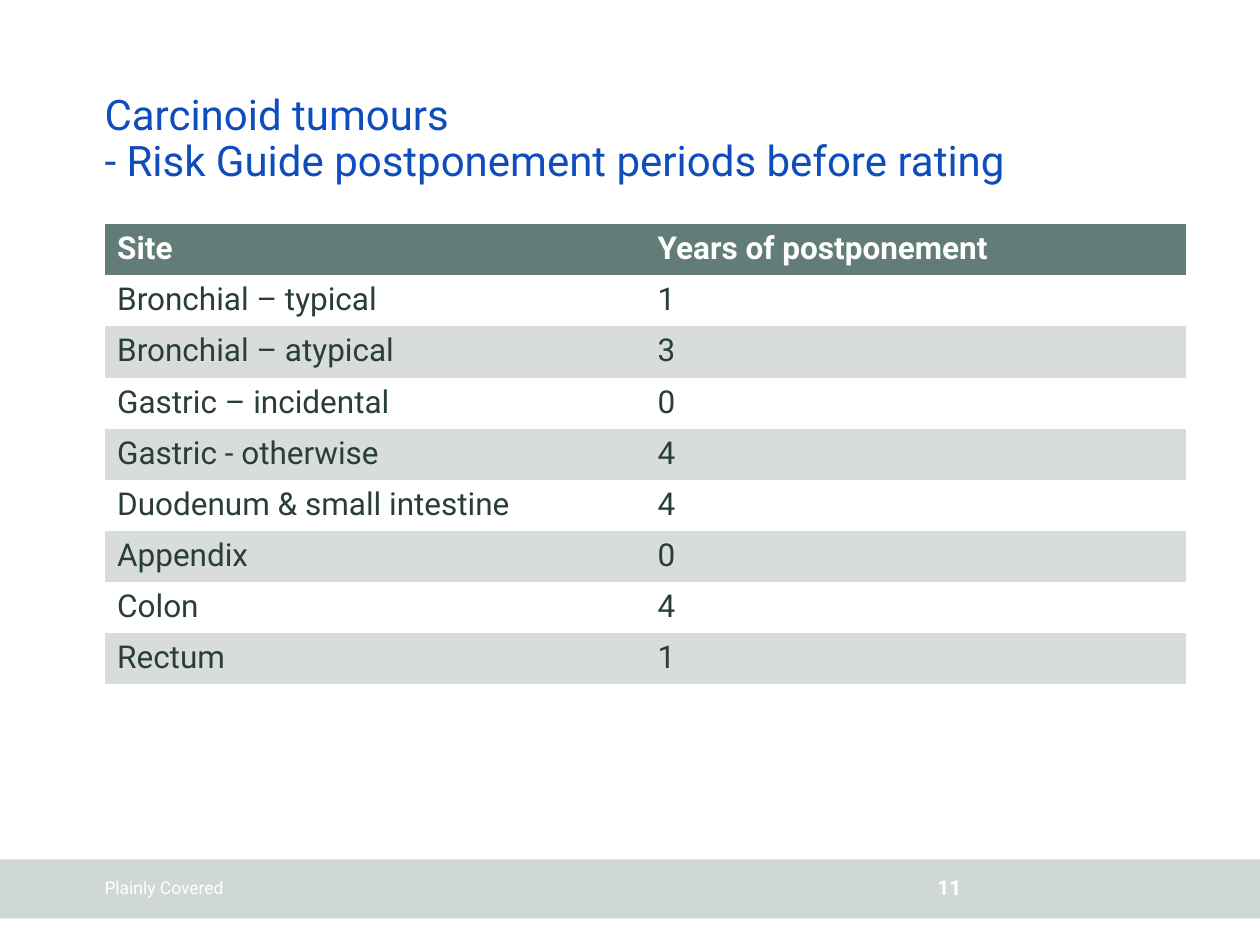
from typing import NamedTuple

from pptx import Presentation
from pptx import util as u
from pptx.dml.color import RGBColor
from pptx.enum import shapes, text

FONT = "Roboto"
WHITE, BLUE, DARK = "FFFFFF", "0F4DBC", "283E36"
HEADER_FILL, BAND_FILL, FOOTER_FILL = "627D77", "D8DCDB", "D0D8D6"
PLAIN_TABLE_STYLE = "{2D5ABB26-0587-4C30-8999-92F81FD0307C}"
LEFT = 0.83


class Postponement(NamedTuple):
    site: str
    years: str


class FooterLabel(NamedTuple):
    wording: str
    box: tuple[float, float, float, float]
    size: int
    bold: bool


HEADINGS = Postponement("Site", "Years of postponement")
PERIODS = [
    Postponement("Bronchial – typical", "1"),
    Postponement("Bronchial – atypical", "3"),
    Postponement("Gastric – incidental", "0"),
    Postponement("Gastric - otherwise", "4"),
    Postponement("Duodenum & small intestine", "4"),
    Postponement("Appendix", "0"),
    Postponement("Colon", "4"),
    Postponement("Rectum", "1"),
]
FOOTER_LABELS = [
    FooterLabel("Plainly Covered", (LEFT, 6.98, 6.46, 0.15), 10, False),
    FooterLabel("11", (7.44, 6.94, 0.2, 0.2), 12, True),
]


def color(value: str) -> RGBColor:
    return RGBColor.from_string(value)


def inches(box: tuple[float, ...]) -> list[u.Length]:
    return [u.Inches(length) for length in box]


def write(frame, wording: str, *, size: int, fill: str, bold: bool = False,
          line_spacing: float | None = None) -> None:
    paragraph = frame.paragraphs[0]
    paragraph.text = wording
    paragraph.alignment = text.PP_ALIGN.LEFT
    if line_spacing:
        paragraph.line_spacing = line_spacing
    for run in paragraph.runs:
        run.font.name = FONT
        run.font.size = u.Pt(size)
        run.font.bold = bold
        run.font.color.rgb = color(fill)


def anchor_bottom(frame, wrap: bool) -> None:
    frame.margin_left = frame.margin_right = 0
    frame.margin_top = frame.margin_bottom = 0
    frame.vertical_anchor = text.MSO_ANCHOR.BOTTOM
    frame.auto_size = text.MSO_AUTO_SIZE.NONE
    frame.word_wrap = wrap


def add_footer(slide) -> None:
    band = slide.shapes.add_shape(shapes.MSO_SHAPE.RECTANGLE,
                                  *inches((0, 6.82, 10, 0.47)))
    band.shadow.inherit = False
    band.fill.solid()
    band.fill.fore_color.rgb = color(FOOTER_FILL)
    band.line.fill.background()
    for label in FOOTER_LABELS:
        frame = slide.shapes.add_textbox(*inches(label.box)).text_frame
        anchor_bottom(frame, wrap=False)
        write(frame, label.wording, size=label.size, fill=WHITE, bold=label.bold)


def add_periods(slide) -> None:
    rows = [HEADINGS, *PERIODS]
    table = slide.shapes.add_table(len(rows), len(HEADINGS),
                                   *inches((LEFT, 1.78, 8.58, 3.65))).table
    # A style without borders
    table._tbl.tblPr.find("{*}tableStyleId").text = PLAIN_TABLE_STYLE
    for r, row in enumerate(rows):
        is_header = r == 0
        for c, wording in enumerate(row):
            cell = table.cell(r, c)
            if r % 2:
                cell.fill.background()
            else:
                cell.fill.solid()
                cell.fill.fore_color.rgb = color(HEADER_FILL if is_header else BAND_FILL)
            write(cell.text_frame, wording, size=18, bold=is_header,
                  fill=WHITE if is_header else DARK)


def main() -> None:
    deck = Presentation()
    deck.slide_width, deck.slide_height = inches((10, 7.5))
    slide = deck.slides.add_slide(deck.slide_layouts[5])

    # Title
    title = slide.shapes.title
    title.left, title.top, title.width, title.height = inches((LEFT, 0.52, 7.48, 0.95))
    anchor_bottom(title.text_frame, wrap=True)
    write(title.text_frame,
          "Carcinoid tumours\v- Risk Guide postponement periods before rating",
          size=24, fill=BLUE, line_spacing=0.9)

    # Footer and table
    add_footer(slide)
    add_periods(slide)
    deck.save("out.pptx")


if __name__ == "__main__":
    main()
